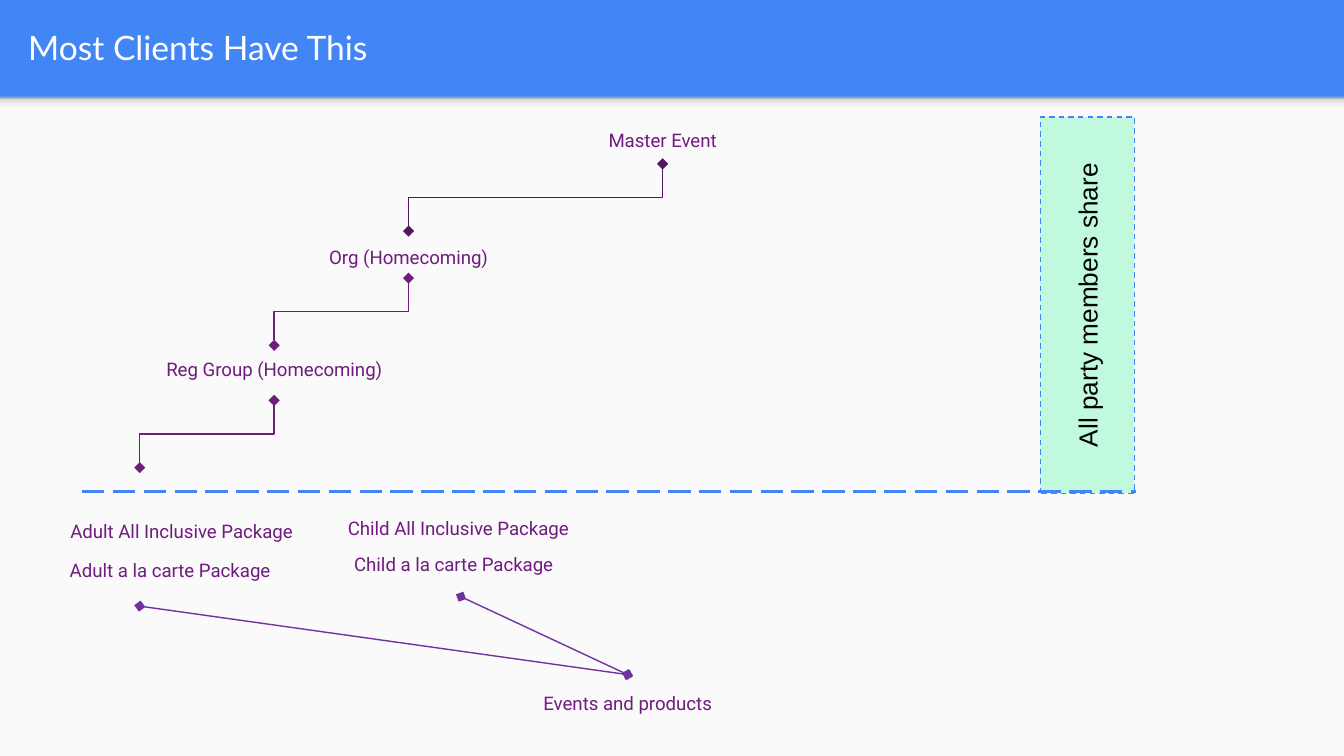
from dataclasses import dataclass

from lxml.etree import SubElement
from pptx import Presentation
from pptx.dml.color import RGBColor
from pptx.enum.dml import MSO_LINE_DASH_STYLE as Dash
from pptx.enum.shapes import MSO_CONNECTOR as Wire, MSO_SHAPE as Shape
from pptx.enum.text import MSO_ANCHOR as Anchor, MSO_AUTO_SIZE as Fit, PP_ALIGN as Align
from pptx.oxml.ns import qn
from pptx.util import Inches, Pt

# Grid: 100 columns of square cells on a 16:9 page
CELL = 0.1
COLUMNS = 100
ROWS = COLUMNS * 9 / 16
BAR = 7.2  # rows taken by the title bar

COLORS = {
    "blue": "4285F4", "paper": "FAFAFA", "white": "FFFFFF", "black": "000000",
    "plum": "701C7F", "dark_plum": "551561", "violet": "7030A0", "mint": "C1F9DE",
}
SHADE = [(0, "F9F9F9"), (36, "F9F9F9"), (80, "DEDEDE"), (100, "999999")]


@dataclass
class Label:
    text: str
    left: float
    top: float
    width: float
    height: float
    align: Align = Align.CENTER


@dataclass
class Link:
    start: tuple[float, float]
    end: tuple[float, float]
    color: str
    elbow: bool = False


LABELS = [
    Label("Master Event", 40.9, 7.2, 16.8, 6.4),
    Label("Org (Homecoming)", 22, 16.9, 16.8, 4.4),
    Label("Reg Group (Homecoming)", 10.8, 24.3, 19.2, 6.4),
    Label("Adult All Inclusive Package", 3.4, 38.1, 20.2, 2.8),
    Label("Adult a la carte Package", 3.8, 41, 17.7, 2.8),
    Label("Child All Inclusive Package", 24.9, 37.9, 20.6, 2.8, Align.LEFT),
    Label("Child a la carte Package", 24.9, 40.6, 17.7, 2.8),
    Label("Events and products", 38.8, 50.2, 15.8, 4.3),
]
PRODUCTS = (46.7, 50.2)
LINKS = [
    Link((30.4, 17.2), (49.3, 12.2), "dark_plum", elbow=True),
    Link((20.4, 25.7), (30.4, 20.7), "plum", elbow=True),
    Link((10.4, 34.8), (20.4, 29.8), "plum", elbow=True),
    Link((10.4, 45.1), PRODUCTS, "violet"),
    Link(PRODUCTS, (34.3, 44.4), "violet"),
]


def grid(cells: float) -> int:
    return Inches(cells * CELL)


def rgb(name: str) -> RGBColor:
    return RGBColor.from_string(COLORS[name])


def write(shape, text: str, *, size: float, font: str, color: str, align=Align.CENTER) -> None:
    frame = shape.text_frame
    frame.word_wrap = True
    frame.auto_size = Fit.NONE
    frame.vertical_anchor = Anchor.MIDDLE
    frame.margin_left = frame.margin_right = grid(1)
    frame.margin_top = frame.margin_bottom = grid(1)
    para = frame.paragraphs[0]
    para.alignment = align
    span = para.add_run()
    span.text = text
    span.font.size = Pt(size)
    span.font.name = font
    span.font.color.rgb = rgb(color)


def add_panel(page, kind: Shape, left: float, top: float, width: float, height: float,
              color: str):
    panel = page.shapes.add_shape(kind, grid(left), grid(top), grid(width), grid(height))
    panel.shadow.inherit = False
    panel.fill.solid()
    panel.fill.fore_color.rgb = rgb(color)
    panel.line.fill.background()
    return panel


def shade(panel) -> None:
    """Fill with a gradient that darkens upwards."""
    panel.fill.gradient()
    panel.fill.gradient_angle = 90
    stops = panel.element.spPr.find(".//" + qn("a:gsLst"))
    for stop in list(stops):
        stops.remove(stop)
    for share, color in SHADE:
        stop = SubElement(stops, qn("a:gs"), pos=str(share * 1000))
        SubElement(stop, qn("a:srgbClr"), val=color)


def add_line(page, kind: Wire, start, end, color: str, width: float):
    line = page.shapes.add_connector(kind, *map(grid, (*start, *end)))
    line.line.color.rgb = rgb(color)
    line.line.width = Pt(width)
    SubElement(line.element.spPr, qn("a:effectLst"))
    return line


def add_link(page, link: Link) -> None:
    start, end = link.start, link.end
    if link.elbow:
        # Turn the ends back about the centre, as the elbow itself is turned 90 degrees
        x, y = (start[0] + end[0]) / 2, (start[1] + end[1]) / 2
        start, end = [(x + row - y, y - column + x) for column, row in (start, end)]
    kind = Wire.ELBOW if link.elbow else Wire.STRAIGHT
    line = add_line(page, kind, start, end, link.color, 0.75)
    if link.elbow:
        line.element.spPr.find(qn("a:xfrm")).set("rot", str(90 * 60000))
    outline = line.element.spPr.find(qn("a:ln"))
    for tip in ("a:headEnd", "a:tailEnd"):
        SubElement(outline, qn(tip), type="diamond")


def main() -> None:
    deck = Presentation()
    deck.slide_width, deck.slide_height = grid(COLUMNS), grid(ROWS)
    page = deck.slides.add_slide(deck.slide_layouts[5])

    # Blue page with a pale body and the title bar's shadow
    page.background.fill.solid()
    page.background.fill.fore_color.rgb = rgb("blue")
    add_panel(page, Shape.RECTANGLE, 0, BAR, COLUMNS, ROWS - BAR, "paper")
    shade(add_panel(page, Shape.RECTANGLE, 0, BAR, COLUMNS, 1.2, "paper"))

    # Title
    title = page.shapes.title
    title.left, title.top, title.width, title.height = map(grid, (1.1, 0.2, 96.5, 6.6))
    write(title, "Most Clients Have This", size=18, font="Lato", color="white",
          align=Align.LEFT)

    # Hierarchy
    for link in LINKS:
        add_link(page, link)
    for label in LABELS:
        box = page.shapes.add_textbox(*map(grid, (label.left, label.top,
                                                  label.width, label.height)))
        write(box, label.text, size=10, font="Roboto", color="plum", align=label.align)

    # Shared part: upright panel and the dividing line
    panel = add_panel(page, Shape.FLOWCHART_PROCESS, 66.9, 19.2, 28, 7, "mint")
    panel.rotation = 270
    panel.line.color.rgb = rgb("blue")
    panel.line.width = Pt(0.75)
    panel.line.dash_style = Dash.DASH
    write(panel, "All party members share", size=14, font="Arial", color="black")
    divider = add_line(page, Wire.STRAIGHT, (6.1, 36.6), (84.5, 36.6), "blue", 1.5)
    divider.line.dash_style = Dash.LONG_DASH

    deck.save("out.pptx")


if __name__ == "__main__":
    main()
